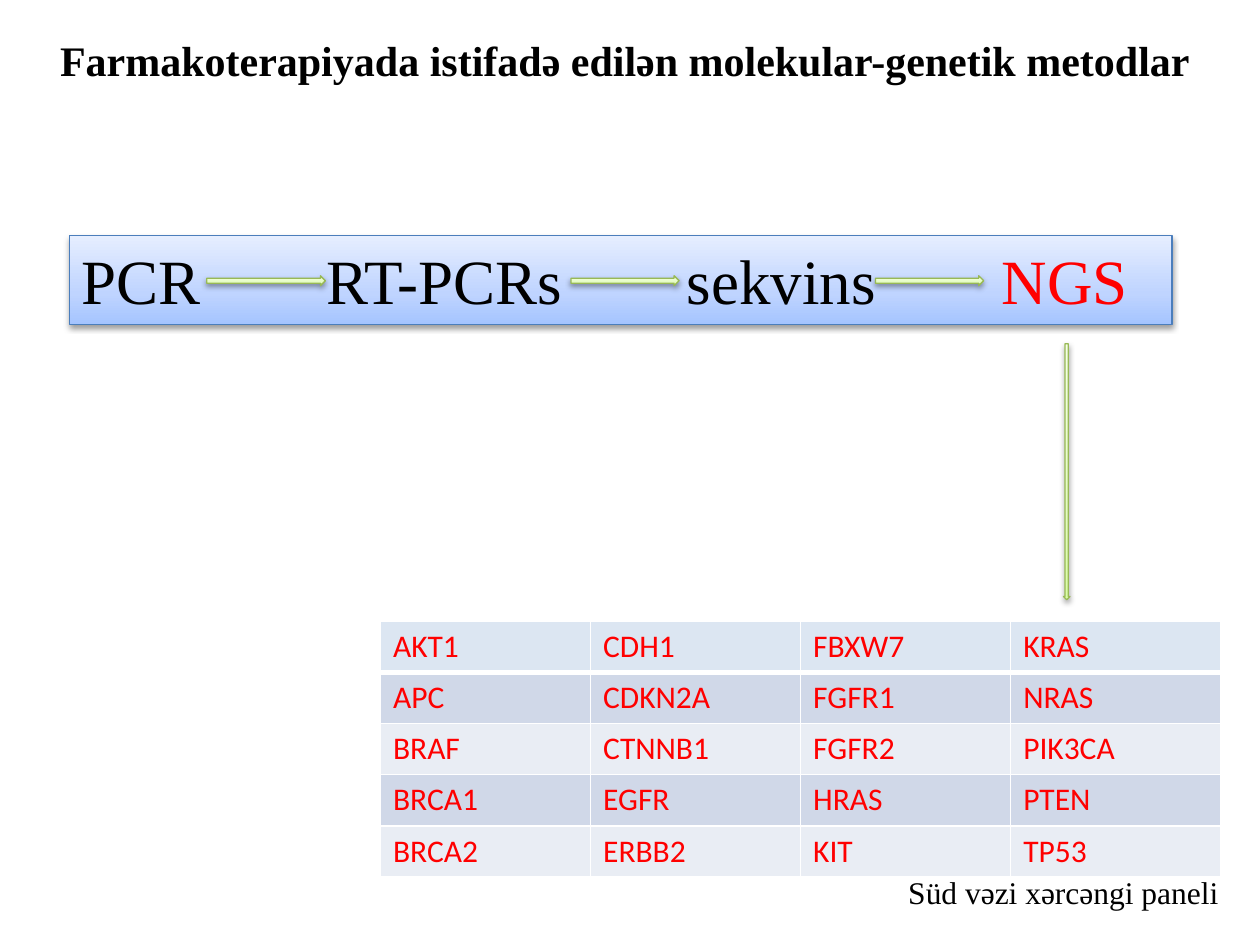
from lxml.etree import SubElement
from pptx import Presentation
from pptx.dml.color import RGBColor
from pptx.enum.shapes import MSO_SHAPE
from pptx.enum.text import MSO_ANCHOR, PP_ALIGN
from pptx.oxml.ns import qn
from pptx.util import Cm, Pt

BLACK = RGBColor(0x00, 0x00, 0x00)
RED = RGBColor(0xFF, 0x00, 0x00)
WHITE = RGBColor(0xFF, 0xFF, 0xFF)
BLUE_LINE = RGBColor(0x4B, 0x7E, 0xBC)
GREEN_LINE = RGBColor(0x98, 0xB9, 0x55)
HEADER_FILL = RGBColor(0xDC, 0xE6, 0xF2)
DARK_BAND = RGBColor(0xD0, 0xD8, 0xE8)
LIGHT_BAND = RGBColor(0xE9, 0xED, 0xF4)
BLUE_STOPS = (RGBColor(0xA4, 0xC4, 0xFF), RGBColor(0xBF, 0xD4, 0xFF),
              RGBColor(0xE6, 0xEE, 0xFF))
GREEN_STOPS = (RGBColor(0xDA, 0xFD, 0xA7), RGBColor(0xE4, 0xFC, 0xC2),
               RGBColor(0xF5, 0xFF, 0xE7))
SERIF = "Times New Roman"
SANS = "Calibri"

GENES = [
    ["AKT1", "CDH1", "FBXW7", "KRAS"],
    ["APC", "CDKN2A", "FGFR1", "NRAS"],
    ["BRAF", "CTNNB1", "FGFR2", "PIK3CA"],
    ["BRCA1", "EGFR", "HRAS", "PTEN"],
    ["BRCA2", "ERBB2", "KIT", "TP53"],
]


def add_run(paragraph, text, size, color, font=SERIF, bold=False):
    run = paragraph.add_run()
    run.text = text
    run.font.name = font
    run.font.size = Pt(size)
    run.font.bold = bold
    run.font.color.rgb = color


def add_color(parent, color):
    return SubElement(parent, qn("a:srgbClr"), val=str(color))


def add_raised_shape(slide, kind, box, stops, line_color):
    """Shape with a bottom-to-top gradient and a soft shadow below."""
    raised = slide.shapes.add_shape(kind, *map(Cm, box))
    raised.shadow.inherit = False
    raised.line.color.rgb = line_color
    raised.line.width = Pt(0.75)

    raised.fill.gradient()
    raised.fill.gradient_angle = 90
    properties = raised.element.spPr
    stop_list = properties.find(".//" + qn("a:gsLst"))
    for old_stop in list(stop_list):
        stop_list.remove(old_stop)
    for position, color in zip((0, 35, 100), stops):
        add_color(SubElement(stop_list, qn("a:gs"), pos=str(position * 1000)), color)

    shadow = SubElement(properties.find(qn("a:effectLst")), qn("a:outerShdw"),
                        blurRad="40000", dist="20000", dir="5400000", rotWithShape="0")
    SubElement(add_color(shadow, BLACK), qn("a:alpha"), val="38000")
    return raised


def add_label(slide, box, text, size, align=PP_ALIGN.LEFT, bold=False):
    frame = slide.shapes.add_textbox(*map(Cm, box)).text_frame
    frame.word_wrap = True
    paragraph = frame.paragraphs[0]
    paragraph.alignment = align
    add_run(paragraph, text, size, BLACK, bold=bold)


def add_arrow(slide, kind, box):
    add_raised_shape(slide, kind, box, GREEN_STOPS, GREEN_LINE)


def add_method_flow(slide, left, top, width, height):
    # Bar with the method names set at tab stops
    bar = add_raised_shape(slide, MSO_SHAPE.RECTANGLE, (left, top, width, height),
                           BLUE_STOPS, BLUE_LINE)
    frame = bar.text_frame
    frame.word_wrap = True
    frame.vertical_anchor = MSO_ANCHOR.TOP
    methods = frame.paragraphs[0]
    methods.alignment = PP_ALIGN.LEFT
    tabs = SubElement(methods._p.get_or_add_pPr(), qn("a:tabLst"))
    for stop in (4.93, 12.2, 18.55):
        SubElement(tabs, qn("a:tab"), pos=str(Cm(stop)), algn="l")
    add_run(methods, "PCR\tRT-PCRs\tsekvins\t", 36, BLACK)
    add_run(methods, "NGS", 36, RED)

    # Arrows between the methods
    for offset, length in ((2.77, 2.39), (10.11, 2.18), (16.25, 2.18)):
        add_arrow(slide, MSO_SHAPE.RIGHT_ARROW, (left + offset, top + 0.81, length, 0.2))


def set_borders(cell, bottom_width):
    properties = cell._tc.get_or_add_tcPr()
    widths = (("a:lnL", 1), ("a:lnR", 1), ("a:lnT", 1), ("a:lnB", bottom_width))
    for index, (side, width) in enumerate(widths):
        border = SubElement(properties, qn(side), w=str(Pt(width)))
        add_color(SubElement(border, qn("a:solidFill")), WHITE)
        properties.insert(index, border)


def add_gene_panel(slide, left, top, width, height):
    # Gene table with banded rows
    genes = slide.shapes.add_table(len(GENES), len(GENES[0]),
                                   *map(Cm, (left, top, width, height))).table
    for row, names in enumerate(GENES):
        band = HEADER_FILL if row == 0 else DARK_BAND if row % 2 else LIGHT_BAND
        for column, name in enumerate(names):
            cell = genes.cell(row, column)
            cell.fill.solid()
            cell.fill.fore_color.rgb = band
            set_borders(cell, 3 if row == 0 else 1)
            add_run(cell.text_frame.paragraphs[0], name, 18, RED, SANS)

    # Panel name under the right-hand columns
    add_label(slide, (left + 10.39, top + height - 0.2, 7.1, 1.02),
              "Süd vəzi xərcəngi paneli", 18)


def main():
    deck = Presentation()
    deck.slide_width, deck.slide_height = Cm(25.4), Cm(19.05)
    slide = deck.slides.add_slide(deck.slide_layouts[6])

    add_label(slide, (0.79, 0.58, 23.62, 1.27),
              "Farmakoterapiyada istifadə edilən molekular-genetik metodlar",
              24, PP_ALIGN.CENTER, bold=True)
    add_method_flow(slide, 1.4, 4.75, 22.23, 1.8)
    add_gene_panel(slide, 7.67, 12.52, 16.94, 5.16)
    # From NGS down to its panel
    add_arrow(slide, MSO_SHAPE.DOWN_ARROW, (21.44, 6.93, 0.13, 5.16))

    deck.save("out.pptx")


if __name__ == "__main__":
    main()
